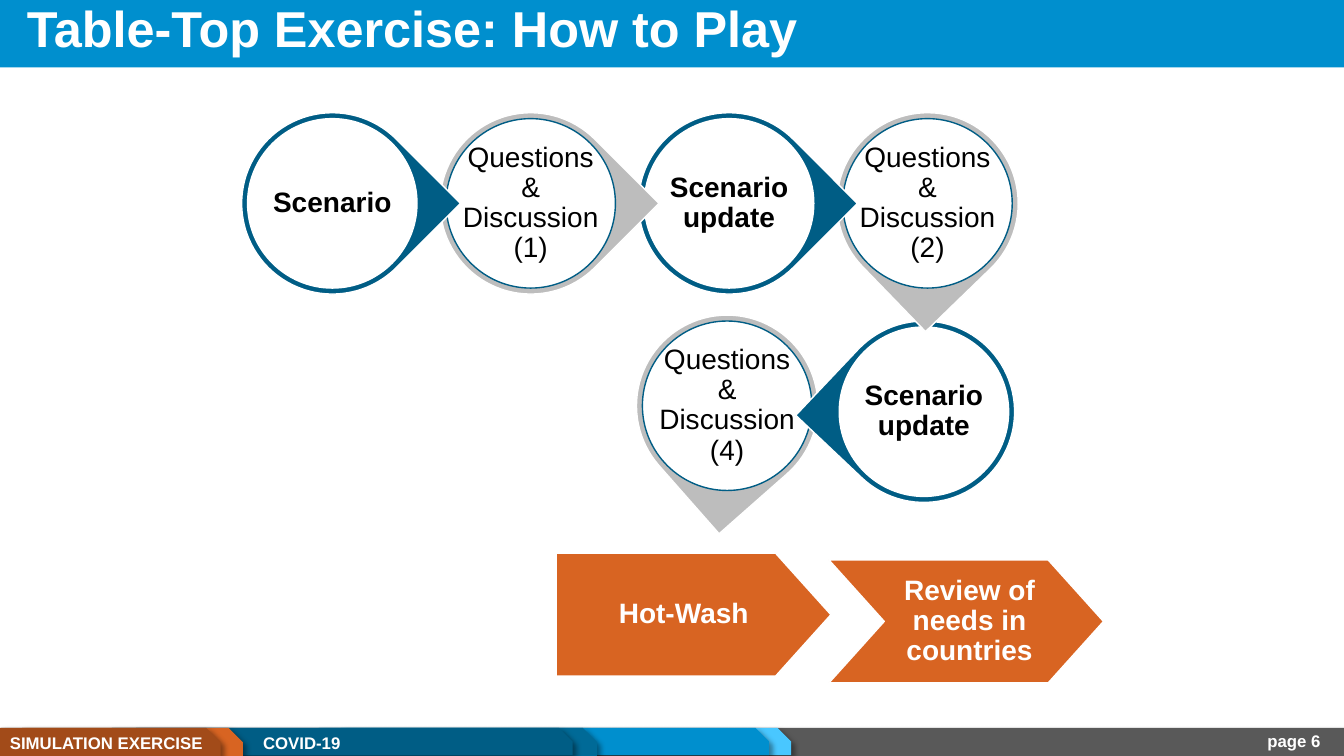
from dataclasses import dataclass

from lxml import etree
from pptx import Presentation
from pptx import util as u
from pptx.dml.color import RGBColor
from pptx.enum import shapes, text
from pptx.oxml import ns

Cm = u.Cm
Preset = shapes.MSO_SHAPE
Align = text.PP_ALIGN
Anchor = text.MSO_ANCHOR


@dataclass(frozen=True)
class Theme:
    font: str = "Arial"
    white: str = "FFFFFF"
    black: str = "000000"
    blue: str = "008FCE"
    sky: str = "49C7FF"
    teal: str = "006A97"
    navy: str = "005D85"
    silver: str = "BDBDBD"
    slate: str = "595959"
    orange: str = "D86422"
    rust: str = "A24B19"
    title_size: int = 36
    body_size: int = 20
    footer_size: int = 12


THEME = Theme()
DROP_SIZE = 4.57
DISC_SIZE = 4.27
ARC_PULL = 0.55


def apply(target, values):
    for name, value in values.items():
        setattr(target, name, value)


def add_child(parent, tag, **attributes):
    return etree.SubElement(parent, ns.qn(tag), attributes)


def paint(shape, fill, line=None):
    shape.shadow.inherit = False
    shape.fill.solid()
    shape.fill.fore_color.rgb = RGBColor.from_string(fill)
    if line:
        shape.line.color.rgb = RGBColor.from_string(line)
        shape.line.width = u.Pt(1)
    else:
        shape.line.fill.background()


def write(shape, words, size, color, bold=True, align=Align.CENTER,
          spacing=None, **frame_format):
    frame = shape.text_frame
    apply(frame, {"word_wrap": True, **frame_format})
    paragraph = frame.paragraphs[0]
    apply(paragraph, {"alignment": align, "line_spacing": spacing})
    run = paragraph.add_run()
    run.text = words
    apply(run.font, {"name": THEME.font, "size": u.Pt(size), "bold": bold})
    run.font.color.rgb = RGBColor.from_string(color)


def add_band(slide, preset, box, fill, shaded=True):
    band = slide.shapes.add_shape(preset, *map(Cm, box))
    paint(band, fill)
    if preset == Preset.SNIP_1_RECTANGLE:
        band.adjustments[0] = 0.5
    if shaded:
        effects = band._element.spPr.find(ns.qn("a:effectLst"))
        shade = add_child(effects, "a:outerShdw", blurRad="50800", dist="38100",
                          dir="2700000", algn="tl", rotWithShape="0")
        color = add_child(shade, "a:srgbClr", val=THEME.black)
        add_child(color, "a:alpha", val="40000")


def add_label(slide, box, words, size, **options):
    label = slide.shapes.add_textbox(*map(Cm, box))
    write(label, words, size, THEME.white, **options)


def round_sides(disc):
    sides = list(disc._element.spPr.iter(ns.qn("a:lnTo")))
    ends = [(int(side[0].get("x")), int(side[0].get("y"))) for side in sides]
    middle = (disc.width / 2, disc.height / 2)
    for side, start, end in zip(sides, ends[-1:] + ends[:-1], ends):
        corner = [a + b - m for a, b, m in zip(start, end, middle)]
        arc = etree.Element(ns.qn("a:cubicBezTo"))
        for anchor, pull in ((start, ARC_PULL), (end, ARC_PULL), (end, 0)):
            x, y = (round(a + (c - a) * pull) for a, c in zip(anchor, corner))
            add_child(arc, "a:pt", x=str(x), y=str(y))
        side.getparent().replace(side, arc)


def add_disc(group, center_x, center_y, line):
    radius = DISC_SIZE / 2
    left, top, right, bottom = map(Cm, (center_x - radius, center_y - radius,
                                        center_x + radius, center_y + radius))
    middle_x, middle_y = Cm(center_x), Cm(center_y)
    outline = group.shapes.build_freeform(left, middle_y)
    outline.add_line_segments(
        [(middle_x, top), (right, middle_y), (middle_x, bottom), (left, middle_y)],
        close=True)
    disc = outline.convert_to_shape()
    round_sides(disc)
    paint(disc, THEME.white, line)
    return disc


def add_step(slide, left, top, rotation, words, is_scenario):
    group = slide.shapes.add_group_shape()
    drop = group.shapes.add_shape(
        Preset.TEAR, Cm(left), Cm(top), Cm(DROP_SIZE), Cm(DROP_SIZE))
    drop.rotation = rotation
    paint(drop, THEME.navy if is_scenario else THEME.silver, THEME.white)
    disc = add_disc(group, left + DROP_SIZE / 2, top + DROP_SIZE / 2,
                    THEME.white if is_scenario else THEME.navy)
    inset = Cm(0.28)
    write(disc, words, THEME.body_size, THEME.black, bold=is_scenario, spacing=0.9,
          vertical_anchor=Anchor.MIDDLE, margin_left=inset, margin_right=inset,
          margin_top=inset, margin_bottom=inset)


def add_closing_arrow(slide, preset, left, top, words, margin_left, margin_right):
    arrow = slide.shapes.add_shape(preset, Cm(left), Cm(top), Cm(6.92), Cm(3.1))
    arrow.adjustments[0] = 0.45
    paint(arrow, THEME.orange, THEME.white)
    write(arrow, words, THEME.body_size, THEME.white, spacing=0.9,
          vertical_anchor=Anchor.MIDDLE, margin_left=Cm(margin_left),
          margin_right=Cm(margin_right), margin_top=Cm(0.18), margin_bottom=Cm(0.18))


def add_header(slide):
    add_band(slide, Preset.RECTANGLE, (-0.02, 0, 33.89, 1.7), THEME.blue, shaded=False)
    add_label(slide, (0.43, -0.03, 29.21, 1.63), "Table-Top Exercise: How to Play",
              THEME.title_size, align=Align.LEFT, spacing=0.9,
              vertical_anchor=Anchor.MIDDLE)


def add_footer(slide):
    top = 18.34
    add_band(slide, Preset.RECTANGLE, (0.02, top, 33.85, 0.73), THEME.slate)
    for left, width, height, fill in (
        (8.59, 11.35, 0.69, THEME.sky),
        (8.03, 11.35, 0.69, THEME.blue),
        (3.43, 11.61, 0.71, THEME.teal),
        (2.82, 11.61, 0.69, THEME.navy),
        (0.56, 5.56, 0.73, THEME.orange),
        (0, 5.56, 0.73, THEME.rust),
    ):
        add_band(slide, Preset.SNIP_1_RECTANGLE, (left, top, width, height), fill)
    for left, label_top, width, words, align, wraps in (
        (0, top, 5.44, "SIMULATION EXERCISE", Align.LEFT, False),
        (6.38, top, 10.67, "COVID-19", Align.LEFT, True),
        (28.98, 18.29, 4.55, "page 6", Align.RIGHT, True),
    ):
        add_label(slide, (left, label_top, width, 0.77), words, THEME.footer_size,
                  align=align, word_wrap=wraps,
                  auto_size=text.MSO_AUTO_SIZE.SHAPE_TO_FIT_TEXT)


def main():
    deck = Presentation()
    apply(deck, {"slide_width": Cm(33.87), "slide_height": Cm(19.05)})
    slide = deck.slides.add_slide(deck.slide_layouts[6])
    add_header(slide)
    add_footer(slide)

    add_closing_arrow(slide, Preset.PENTAGON, 14.02, 13.94, "Hot-Wash", 0.38, 0.18)
    add_closing_arrow(slide, Preset.CHEVRON, 20.89, 14.11,
                      "Review of needs in countries", 0.42, 0.25)

    add_step(slide, 16.04, 7.94, 138.6, "Questions & Discussion (4)", False)
    add_step(slide, 21.0, 8.09, 223.4, "Scenario update", True)
    top_row = (
        ("Scenario", 45, True),
        ("Questions & Discussion (1)", 45, False),
        ("Scenario update", 45, True),
        ("Questions & Discussion (2)", 135.9, False),
    )
    for column, (words, rotation, is_scenario) in reversed(list(enumerate(top_row))):
        add_step(slide, 6.09 + 5 * column, 2.84, rotation, words, is_scenario)

    deck.save("out.pptx")


if __name__ == "__main__":
    main()
